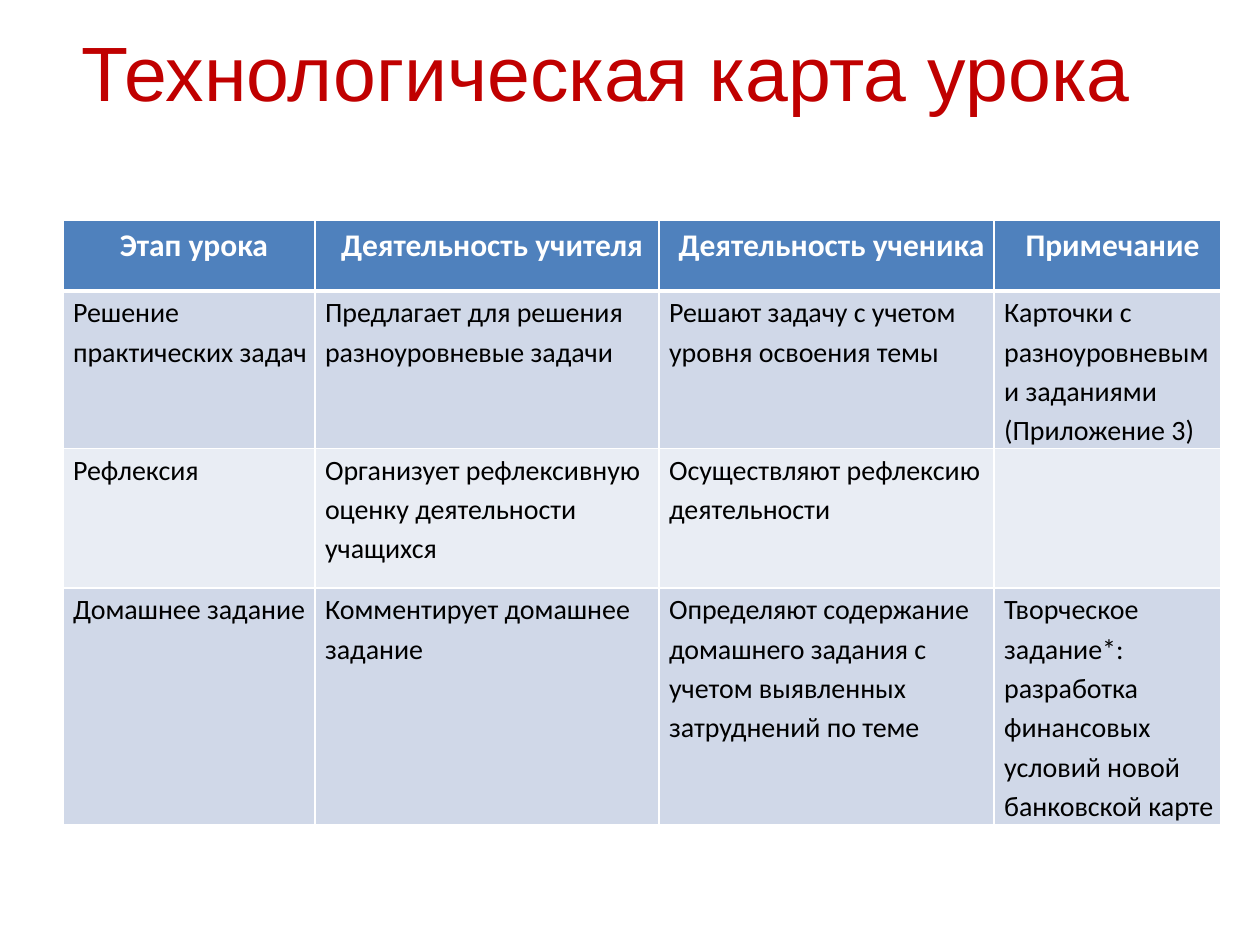
import pptx
import pptx.dml.color
import pptx.enum.text
import pptx.oxml
import pptx.oxml.ns
import pptx.util

Pt = pptx.util.Pt
RGB = pptx.dml.color.RGBColor.from_string
PP_ALIGN = pptx.enum.text.PP_ALIGN
ANCHOR = pptx.enum.text.MSO_ANCHOR


class Theme:
    title = {"name": "Arial", "size": Pt(44)}
    title_color = "C00000"
    header = {"name": "Calibri", "size": Pt(18), "bold": True}
    header_color = "FFFFFF"
    header_fill = "4F81BD"
    body = {"name": "Calibri", "size": Pt(16), "bold": False}
    body_color = "000000"
    bands = ("D0D8E8", "E9EDF4")
    border = "FFFFFF"


COL_WIDTHS = (144, 196.6, 191.5, 129.6)
ROW_HEIGHTS = (40.3, 54.7, 79.9, 79.9)
ROWS = (
    ("Этап урока", "Деятельность учителя", "Деятельность ученика", "Примечание"),
    ("Решение практических задач",
     "Предлагает для решения разноуровневые задачи",
     "Решают задачу с учетом уровня освоения темы",
     "Карточки с разноуровневыми заданиями (Приложение 3)"),
    ("Рефлексия",
     "Организует рефлексивную оценку деятельности учащихся",
     "Осуществляют рефлексию деятельности",
     ""),
    ("Домашнее задание",
     "Комментирует домашнее задание",
     "Определяют содержание домашнего задания с учетом выявленных "
     "затруднений по теме",
     "Творческое задание*: разработка финансовых условий новой "
     "банковской карте"),
)


def apply(obj, values):
    for name, value in values.items():
        setattr(obj, name, value)


def write(p, text, font, color):
    r = p.add_run()
    r.text = text
    apply(r.font, font)
    r.font.color.rgb = RGB(color)


def add_title(s, text):
    sp = s.shapes.add_textbox(Pt(39.6), Pt(6.5), Pt(680.4), Pt(67.7))
    tf = sp.text_frame
    apply(tf, {"word_wrap": True, "vertical_anchor": ANCHOR.MIDDLE})
    write(tf.paragraphs[0], text, Theme.title, Theme.title_color)


def set_borders(cell, bottom):
    # Border lines must come before the fill in the cell properties
    widths = {"lnL": 1, "lnR": 1, "lnT": 1, "lnB": bottom}
    for i, (tag, width) in enumerate(widths.items()):
        ln = pptx.oxml.parse_xml(
            f'<a:{tag} {pptx.oxml.ns.nsdecls("a")} w="{Pt(width)}">'
            f'<a:solidFill><a:srgbClr val="{Theme.border}"/></a:solidFill>'
            f'</a:{tag}>')
        cell._tc.get_or_add_tcPr().insert(i, ln)


def fill_cell(cell, text, row):
    is_header = row == 0
    apply(cell, dict.fromkeys(
        ("margin_left", "margin_right", "margin_top", "margin_bottom"), 0))
    cell.fill.solid()
    cell.fill.fore_color.rgb = RGB(
        Theme.header_fill if is_header else Theme.bands[(row - 1) % 2])
    set_borders(cell, 3 if is_header else 1)
    if not text:
        return
    p = cell.text_frame.paragraphs[0]
    apply(p, {"line_spacing": 1.15,
              "alignment": PP_ALIGN.CENTER if is_header else PP_ALIGN.LEFT})
    apply_indent = p._p.get_or_add_pPr().set
    apply_indent("marL", str(Pt(5.76)))
    apply_indent("indent", "0")
    if is_header:
        write(p, text, Theme.header, Theme.header_color)
    else:
        write(p, text, Theme.body, Theme.body_color)


def add_lesson_table(s):
    frame = s.shapes.add_table(
        len(ROWS), len(COL_WIDTHS), Pt(36), Pt(126),
        Pt(sum(COL_WIDTHS)), Pt(sum(ROW_HEIGHTS)))
    table = frame.table
    for column, width in zip(table.columns, COL_WIDTHS):
        column.width = Pt(width)
    for i, (row, height) in enumerate(zip(table.rows, ROW_HEIGHTS)):
        row.height = Pt(height)
        for cell, text in zip(row.cells, ROWS[i]):
            fill_cell(cell, text, i)


def main():
    prs = pptx.Presentation()
    apply(prs, {"slide_width": Pt(720), "slide_height": Pt(540)})
    s = prs.slides.add_slide(prs.slide_layouts[6])
    # Stages of the lesson, then the heading above them
    add_lesson_table(s)
    add_title(s, "Технологическая карта урока")
    prs.save("out.pptx")


if __name__ == "__main__":
    main()
